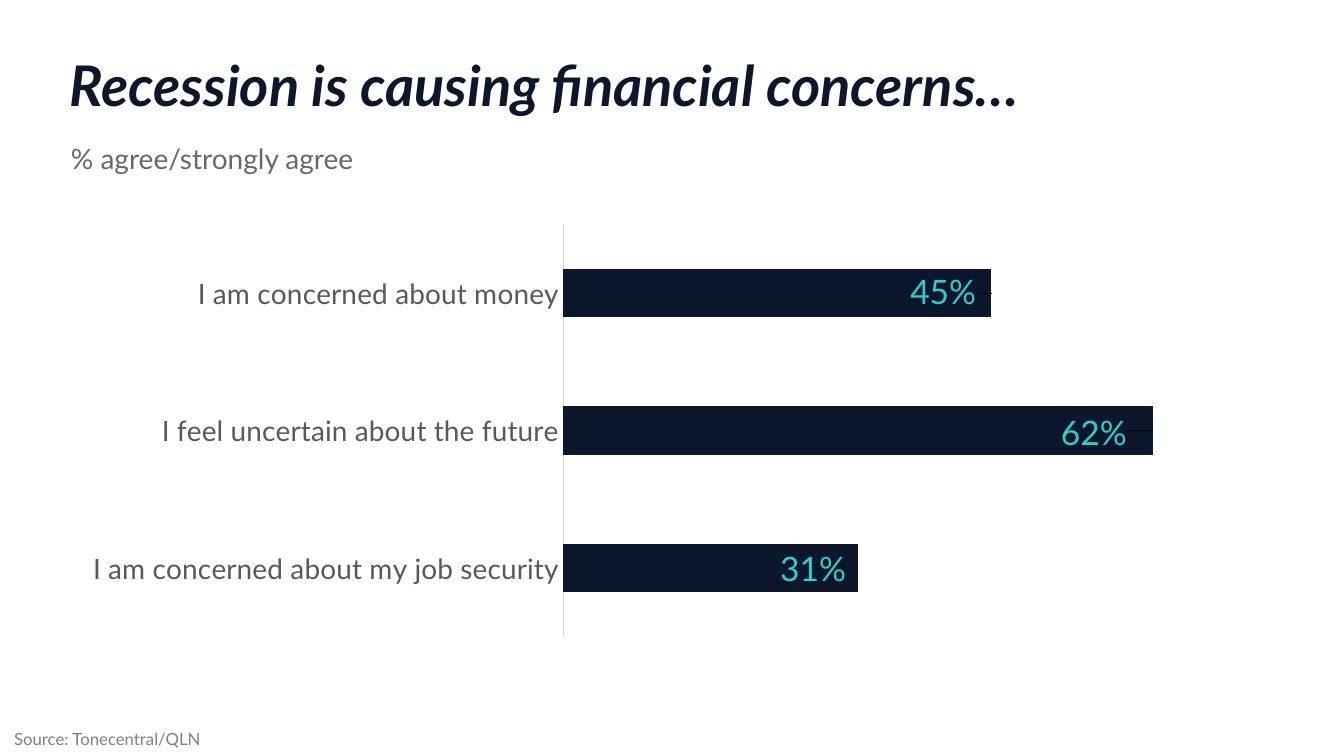
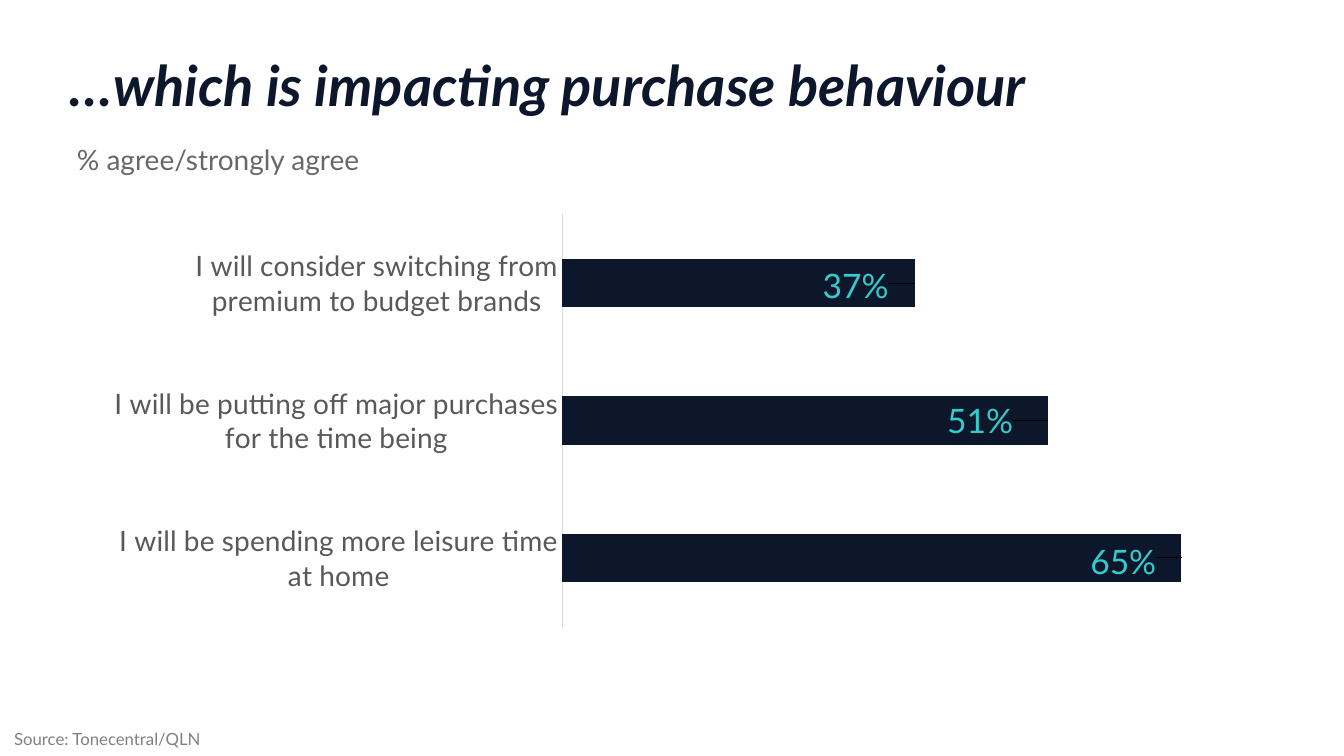
"""Build two survey slides, each with a titled horizontal bar chart."""
from lxml import etree
from pptx import Presentation
from pptx import util as u
from pptx.chart import data as chart_data
from pptx.dml import color
from pptx.enum import chart as charts
from pptx.oxml import ns

PX = 914400 / 100.8
COLORS = {"navy": "0D172C", "teal": "33CCCC", "subtitle": "686869",
          "category": "595959", "source": "808080", "axis": "D9D9D9"}
FORMATS = {
    "title": {"size": u.Pt(40), "bold": True, "italic": True, "color": "navy"},
    "subtitle": {"size": u.Pt(20), "color": "subtitle"},
    "source": {"size": u.Pt(12), "color": "source"},
    "category": {"size": u.Pt(20), "color": "category"},
    "value": {"size": u.Pt(24), "color": "teal"},
}
CHART_WIDTH, CHART_HEIGHT = 1159, 480
PLOT_AREA = {"layoutTarget": "inner", "xMode": "edge", "yMode": "edge",
             "x": 0.405, "y": 0.026, "w": 0.575, "h": 0.859}
SLIDES = [
    {"title": "Recession is causing financial concerns…",
     "subtitle": (61, 136), "chart_top": 212,
     "bars": [("I am concerned about my job security", 0.31, (-8, 0)),
              ("I feel uncertain about the future", 0.62, (-22, 2)),
              ("I am concerned about money", 0.45, (-11, -2))]},
    {"title": "…which is impacting purchase behaviour",
     "subtitle": (67, 137), "chart_top": 202,
     "bars": [("I will be spending more leisure time at home", 0.65, (-21, 3)),
              ("I will be putting off major purchases for the time being", 0.51, (-31, 0)),
              ("I will consider switching from premium to budget brands", 0.37, (-22, 2))]},
]


def set_font(font, style):
    font.name = "Lato"
    for name, value in FORMATS[style].items():
        if name == "color":
            font.color.rgb = color.RGBColor.from_string(COLORS[value])
        else:
            setattr(font, name, value)


def add_layout(parent, index, values):
    layout = etree.Element(ns.qn("c:layout"))
    manual = etree.SubElement(layout, ns.qn("c:manualLayout"))
    for name, value in values.items():
        etree.SubElement(manual, ns.qn(f"c:{name}")).set("val", str(value))
    for previous in parent.findall(ns.qn("c:layout")):
        parent.remove(previous)
    parent.insert(index, layout)


presentation = Presentation()
presentation.slide_width = round(1344 * PX)
presentation.slide_height = round(756 * PX)

for content in SLIDES:
    slide = presentation.slides.add_slide(presentation.slide_layouts[6])
    texts = [
        ("title", content["title"], (70, 58, 1222, 71), (0, 0)),
        ("subtitle", "% agree/strongly agree", (*content["subtitle"], 1222, 89), (10, 5)),
        ("source", "Source: Tonecentral/QLN", (1, 722, 356, 34), (13, 7)),
    ]
    for style, wording, box, (inset_x, inset_y) in texts:
        frame = slide.shapes.add_textbox(*[round(length * PX) for length in box]).text_frame
        frame.word_wrap = True
        frame.margin_left = frame.margin_right = round(inset_x * PX)
        frame.margin_top = frame.margin_bottom = round(inset_y * PX)
        paragraph = frame.paragraphs[0]
        if style == "title":
            paragraph.line_spacing = u.Pt(42.7)
        run = paragraph.add_run()
        run.text = wording
        set_font(run.font, style)

    categories, values, shifts = zip(*content["bars"])
    figures = chart_data.CategoryChartData(number_format="0%")
    figures.categories = categories
    figures.add_series("Series 1", values)
    box = (93, content["chart_top"], CHART_WIDTH, CHART_HEIGHT)
    chart = slide.shapes.add_chart(charts.XL_CHART_TYPE.BAR_CLUSTERED,
                                   *[round(length * PX) for length in box], figures).chart
    chart.has_legend = chart.has_title = False
    chart.font.name, chart.font.size = "Calibri", u.Pt(10)

    category_axis = chart.category_axis
    category_axis.major_tick_mark = charts.XL_TICK_MARK.NONE
    set_font(category_axis.tick_labels.font, "category")
    category_axis.format.line.width = u.Pt(0.75)
    category_axis.format.line.color.rgb = color.RGBColor.from_string(COLORS["axis"])
    value_axis = chart.value_axis
    value_axis.visible = value_axis.has_major_gridlines = False
    value_axis.minimum_scale, value_axis.maximum_scale = 0, 0.7

    plot = chart.plots[0]
    plot.gap_width, plot.vary_by_categories = 182, False
    add_layout(plot._element.getparent(), 0, PLOT_AREA)
    series = plot.series[0]
    series.format.fill.solid()
    series.format.fill.fore_color.rgb = color.RGBColor.from_string(COLORS["navy"])
    labels = series.data_labels
    labels.show_value = True
    labels.number_format, labels.number_format_is_linked = "0%", False
    set_font(labels.font, "value")
    for index, (shift_x, shift_y) in enumerate(shifts):
        label = series.points[index].data_label
        set_font(label.font, "value")
        label.position = charts.XL_LABEL_POSITION.INSIDE_END
        add_layout(labels._element.findall(ns.qn("c:dLbl"))[index], 1,
                   {"x": round(shift_x / CHART_WIDTH, 4), "y": round(shift_y / CHART_HEIGHT, 4)})

presentation.save("out.pptx")
